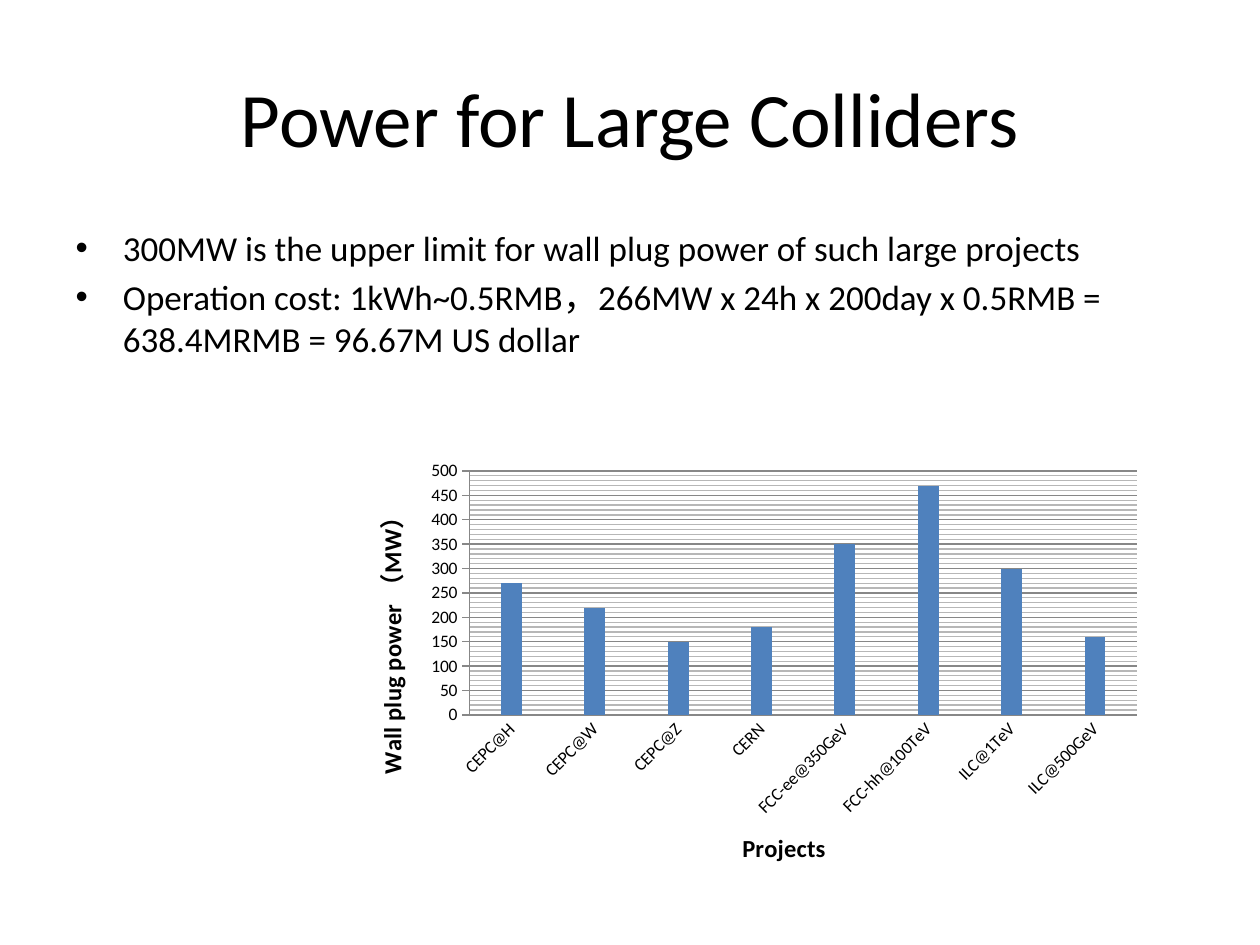
from copy import deepcopy

from pptx import Presentation
from pptx import util as u
from pptx.chart import data as chart_data
from pptx.dml import color
from pptx.enum import chart as charts, text
from pptx.oxml import ns

COLORS = {"text": "000000", "bar": "4F81BD", "line": "878787", "minor": "B7B7B7"}
FONT = "Calibri"
POWER = {
    "CEPC@H": 270, "CEPC@W": 220, "CEPC@Z": 150, "CERN": 180,
    "FCC-ee@350GeV": 350, "FCC-hh@100TeV": 470, "ILC@1TeV": 300, "ILC@500GeV": 160,
}
POINTS = [
    "300MW is the upper limit for wall plug power of such large projects",
    "Operation cost: 1kWh~0.5RMB，266MW x 24h x 200day x 0.5RMB = 638.4MRMB = 96.67M US dollar",
]


def rgb(name):
    """Return the named colour."""
    return color.RGBColor.from_string(COLORS[name])


def apply(target, values):
    """Set every attribute in values on target."""
    for name, value in values.items():
        setattr(target, name, value)


def style_font(font, size, bold=False):
    """Give a font the slide's typeface and text colour."""
    apply(font, {"name": FONT, "size": u.Pt(size), "bold": bold})
    font.color.rgb = rgb("text")


def place(shape, box):
    """Move a shape to a box given in inches."""
    apply(shape, dict(zip(("left", "top", "width", "height"), map(u.Inches, box))))


def fill_placeholder(shape, box, lines, size, anchor, paragraph_format):
    """Place a placeholder and write its paragraphs."""
    place(shape, box)
    frame = shape.text_frame
    apply(frame, {"text": "\n".join(lines), "word_wrap": True, "vertical_anchor": anchor})
    for paragraph in frame.paragraphs:
        apply(paragraph, paragraph_format)
        for run in paragraph.runs:
            style_font(run.font, size)


def style_axis(axis, title, values):
    """Format an axis and write its title."""
    apply(axis, values)
    axis.format.line.color.rgb = rgb("line")
    style_font(axis.tick_labels.font, 10)
    paragraph = axis.axis_title.text_frame.paragraphs[0]
    run = paragraph.add_run()
    run.text = title
    style_font(run.font, 14, bold=True)


def style_gridlines(axis):
    """Colour the major gridlines and give the minor ones a lighter line."""
    axis.major_gridlines.format.line.color.rgb = rgb("line")
    major, minor = (axis._element.find(ns.qn(tag))
                    for tag in ("c:majorGridlines", "c:minorGridlines"))
    properties = deepcopy(major.find(ns.qn("c:spPr")))
    next(properties.iter(ns.qn("a:srgbClr"))).set("val", COLORS["minor"])
    minor.append(properties)


def add_power_chart(slide, box):
    """Add the column chart of wall plug power by project."""
    data = chart_data.CategoryChartData()
    data.categories = list(POWER)
    data.add_series("Series 1", list(POWER.values()))
    chart = slide.shapes.add_chart(
        charts.XL_CHART_TYPE.COLUMN_CLUSTERED, *map(u.Inches, box), data).chart
    apply(chart, {"has_legend": False, "has_title": False})
    style_font(chart.font, 10)
    tick = charts.XL_TICK_MARK
    style_axis(chart.category_axis, "Projects",
               {"major_tick_mark": tick.NONE, "minor_tick_mark": tick.NONE})
    style_axis(chart.value_axis, "Wall plug power （MW）", {
        "minimum_scale": 0, "maximum_scale": 500, "major_unit": 50, "minor_unit": 10,
        "has_major_gridlines": True, "has_minor_gridlines": True,
        "major_tick_mark": tick.CROSS, "minor_tick_mark": tick.NONE})
    style_gridlines(chart.value_axis)
    plot = chart.plots[0]
    apply(plot, {"gap_width": 300, "vary_by_categories": False})
    fill = plot.series[0].format.fill
    fill.solid()
    fill.fore_color.rgb = rgb("bar")


def main():
    """Build and save the slide."""
    presentation = Presentation()
    apply(presentation, {"slide_width": u.Inches(10), "slide_height": u.Inches(7.5)})
    slide = presentation.slides.add_slide(presentation.slide_layouts[1])
    title, body = slide.placeholders
    fill_placeholder(title, (0.5, 0.3, 9, 1.25), ["Power for Large Colliders"], 44,
                     text.MSO_ANCHOR.MIDDLE, {"alignment": text.PP_ALIGN.CENTER})
    fill_placeholder(body, (0.5, 1.75, 9, 4.95), POINTS, 20,
                     text.MSO_ANCHOR.TOP, {"alignment": text.PP_ALIGN.LEFT})
    body.text_frame.paragraphs[0].space_before = u.Pt(0)
    add_power_chart(slide, (2.72, 3.59, 6.43, 3.49))
    presentation.save("out.pptx")


if __name__ == "__main__":
    main()
